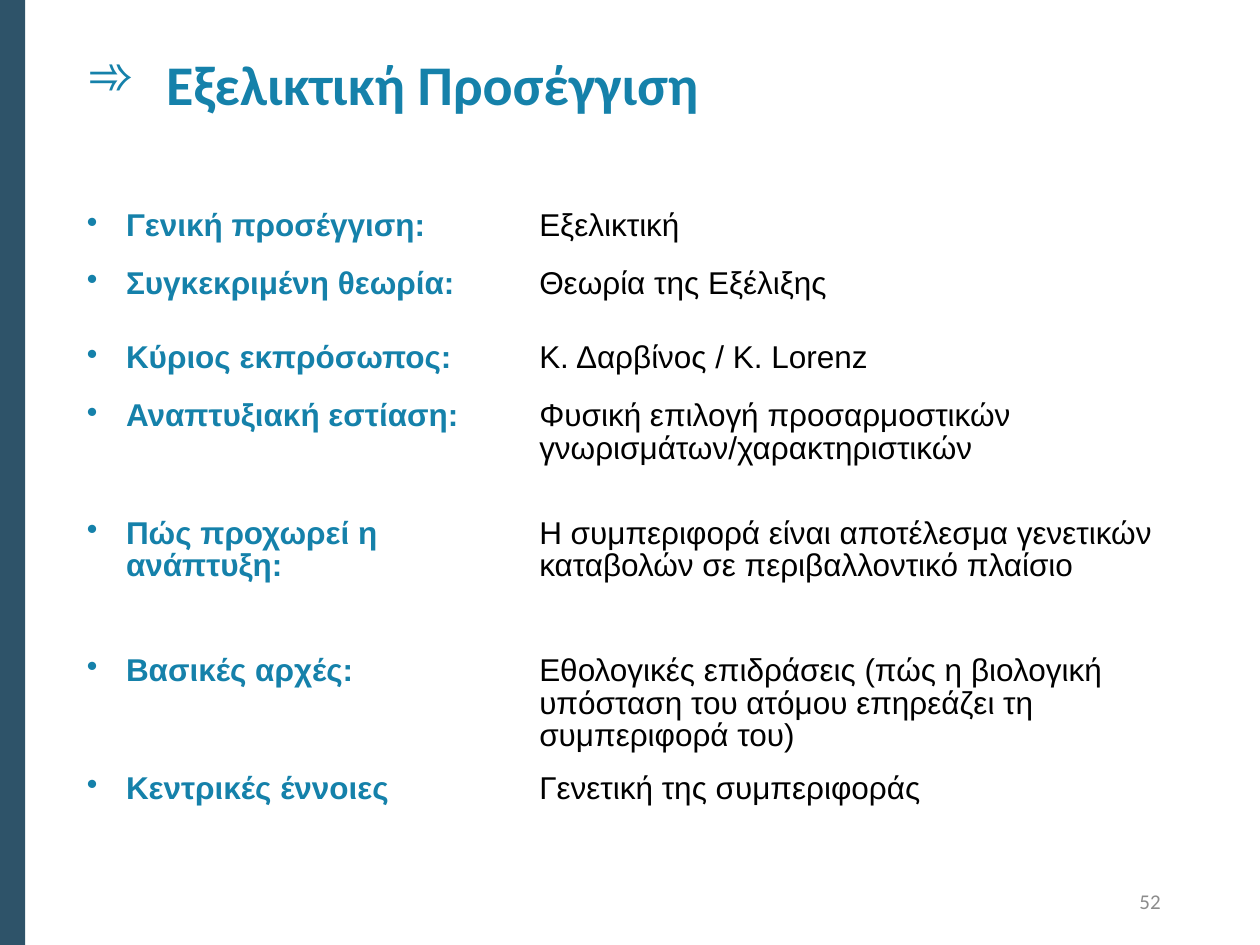
from typing import NamedTuple

from lxml.etree import SubElement
from pptx import Presentation
from pptx.dml.color import RGBColor
from pptx.enum.shapes import MSO_SHAPE
from pptx.enum.text import MSO_ANCHOR, PP_ALIGN
from pptx.oxml.ns import qn
from pptx.util import Inches, Pt

BAND = RGBColor(0x2E, 0x53, 0x69)
TEAL = RGBColor(0x15, 0x81, 0xAA)
BLACK = RGBColor(0, 0, 0)
GRAY = RGBColor(0x8C, 0x8C, 0x8C)
WHITE = RGBColor(0xFF, 0xFF, 0xFF)

TITLE = {"name": "Calibri", "size": Pt(32), "bold": True}
LABEL = {"name": "Arial", "size": Pt(18), "bold": True}
VALUE = {"name": "Arial", "size": Pt(18), "bold": False}
NUMBER = {"name": "Calibri", "size": Pt(12)}


class Row(NamedTuple):
    label: str
    value: str
    height: float


ROWS = [
    Row("Γενική προσέγγιση:", "Εξελικτική", 0.46),
    Row("Συγκεκριμένη θεωρία:", "Θεωρία της Εξέλιξης", 0.59),
    Row("Κύριος εκπρόσωπος:", "Κ. Δαρβίνος / K. Lorenz", 0.46),
    Row("Αναπτυξιακή εστίαση:",
        "Φυσική επιλογή προσαρμοστικών γνωρισμάτων/χαρακτηριστικών", 0.93),
    Row("Πώς προχωρεί η ανάπτυξη:",
        "Η συμπεριφορά είναι αποτέλεσμα γενετικών καταβολών σε "
        "περιβαλλοντικό πλαίσιο", 1.09),
    Row("Βασικές αρχές:",
        "Εθολογικές επιδράσεις (πώς η βιολογική υπόσταση του ατόμου "
        "επηρεάζει τη συμπεριφορά του)", 0.84),
    Row("Κεντρικές έννοιες", "Γενετική της συμπεριφοράς", 0.84),
]
COLUMNS = (3.59, 5.47)


def write(tf, text: str, font: dict, color: RGBColor):
    """Fill the first paragraph of a text frame and return it."""
    tf.word_wrap = True
    p = tf.paragraphs[0]
    r = p.add_run()
    r.text = text
    for name, value in font.items():
        setattr(r.font, name, value)
    r.font.color.rgb = color
    return p


def add_bullet(p, char: str, indent: float) -> None:
    pPr = p._p.get_or_add_pPr()
    pPr.set("marL", str(Inches(indent)))
    pPr.set("indent", str(-Inches(indent)))
    SubElement(pPr, qn("a:buChar"), char=char)


def format_cell(cell) -> None:
    """White hairlines on every side, no fill."""
    tcPr = cell._tc.get_or_add_tcPr()
    for side in ("lnL", "lnR", "lnT", "lnB"):
        ln = SubElement(tcPr, qn(f"a:{side}"), w=str(Pt(1)))
        fill = SubElement(ln, qn("a:solidFill"))
        SubElement(fill, qn("a:srgbClr"), val=str(WHITE))
    cell.fill.background()


def add_facts(slide, rows: list[Row]) -> None:
    frame = slide.shapes.add_table(
        len(rows), len(COLUMNS), Inches(0.59), Inches(1.62),
        Inches(sum(COLUMNS)), Inches(sum(row.height for row in rows)))
    table = frame.table
    table.first_row = table.horz_banding = False
    for column, width in zip(table.columns, COLUMNS):
        column.width = Inches(width)
    for i, row in enumerate(rows):
        table.rows[i].height = Inches(row.height)
        label, value = table.cell(i, 0), table.cell(i, 1)
        p = write(label.text_frame, row.label, LABEL, TEAL)
        p.line_spacing = 0.93
        add_bullet(p, "•", 0.31)
        p = write(value.text_frame, row.value, VALUE, BLACK)
        p.line_spacing = 0.93
        p.space_before = Pt(15)
        format_cell(label)
        format_cell(value)


def main() -> None:
    prs = Presentation()
    prs.slide_width, prs.slide_height = Inches(10), Inches(7.5)
    slide = prs.slides.add_slide(prs.slide_layouts[6])

    # Side band
    sp = slide.shapes.add_shape(MSO_SHAPE.RECTANGLE, 0, 0, Inches(0.2), Inches(7.5))
    sp.shadow.inherit = False
    sp.fill.solid()
    sp.fill.fore_color.rgb = BAND
    sp.line.fill.background()

    # Title
    sp = slide.shapes.add_textbox(Inches(0.6), Inches(0.34), Inches(8.74), Inches(0.97))
    p = write(sp.text_frame, "Εξελικτική Προσέγγιση", TITLE, TEAL)
    add_bullet(p, "➾", 0.62)

    # Table of facts
    add_facts(slide, ROWS)

    # Slide number
    sp = slide.shapes.add_textbox(Inches(7.06), Inches(6.95), Inches(2.25), Inches(0.4))
    sp.text_frame.vertical_anchor = MSO_ANCHOR.MIDDLE
    p = write(sp.text_frame, "52", NUMBER, GRAY)
    p.alignment = PP_ALIGN.RIGHT

    prs.save("out.pptx")


if __name__ == "__main__":
    main()
